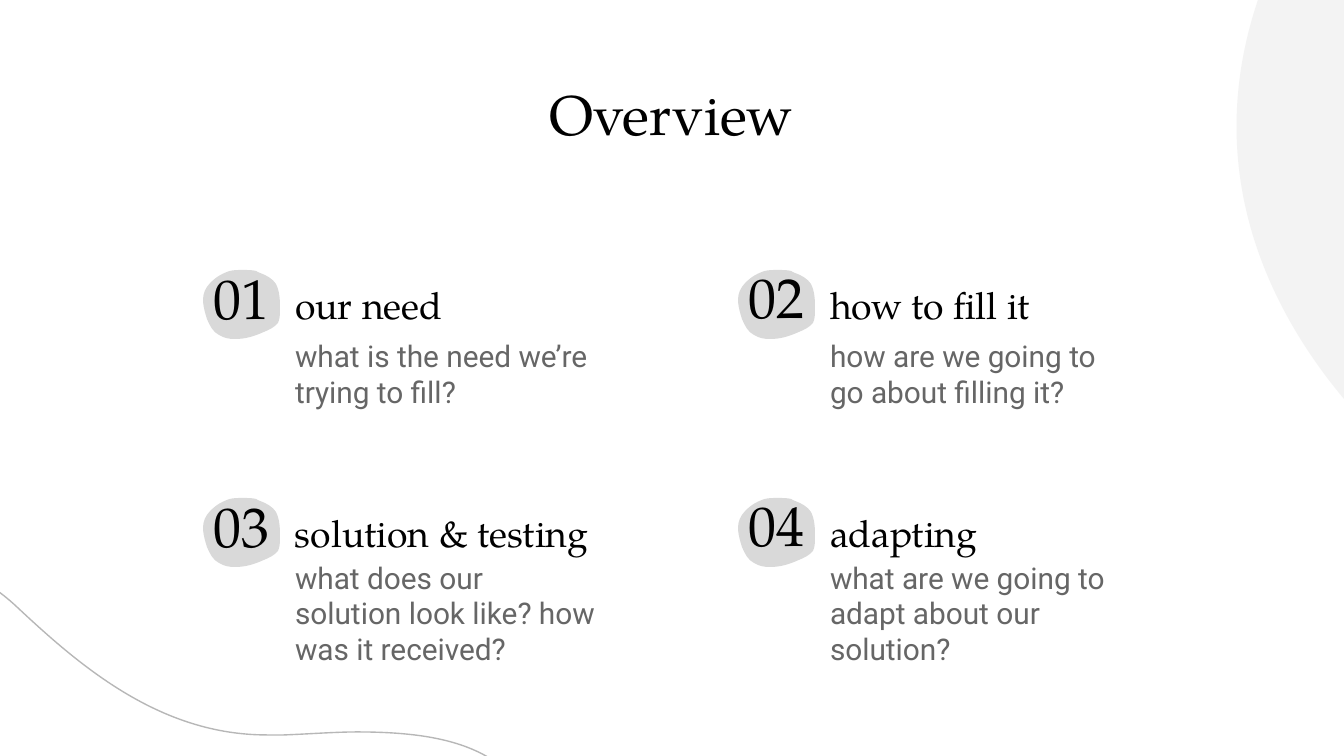
from lxml import etree
from pptx import Presentation
from pptx import util as u
from pptx.dml.color import RGBColor
from pptx.enum import text
from pptx.oxml import ns

PX = 914400 / 134.4
SLIDE = (1344, 756)

THEME = {
    "serif": "TeX Gyre Pagella", "sans": "Roboto",
    "ink": "000000", "muted": "666666",
    "blob": "D9D9D9", "disc": "F3F3F3", "wave": "B7B7B7",
    "display": 30, "heading": 20, "body": 16, "hairline": 0.75,
}

TITLE = "Overview"
TOPICS = [
    {"number": "01", "heading": "our need", "width": 281,
     "body": "what is the need we’re trying to fill?"},
    {"number": "02", "heading": "how to fill it", "width": 281,
     "body": "how are we going to go about filling it?"},
    {"number": "03", "heading": "solution & testing", "width": 352,
     "body": "what does our solution look like? how was it received?"},
    {"number": "04", "heading": "adapting", "width": 281,
     "body": "what are we going to adapt about our solution?"},
]

COLUMNS, LEFT, TOP = 2, 200, 270
PITCH_X, PITCH_Y = 535, 228
NUMBER_NUDGE = (1, 0)
BODY_DROP = (62, 73)

DISC = [[(1446, 0)], [(1446, 493)], [(1435, 488), (1159, 294), (1258, 0)]]
WAVE = [
    [(542, 817)],
    [(509, 753), (458, 732), (357, 732)],
    [(336, 732), (310, 734), (284, 735)],
    [(278, 735), (273, 735), (267, 735)],
    [(161, 735), (82, 668), (17, 607)],
    [(-17, 575), (-56, 560), (-95, 560)],
    [(-141, 560), (-186, 583), (-214, 628)],
    [(-214, 817)],
]
BLOB = [
    [(43, 0)],
    [(38, 0), (34, 0), (30, 1)],
    [(20, 4), (12, 10), (7, 17)],
    [(0, 27), (4, 39), (7, 49)],
    [(10, 56), (13, 62), (19, 65)],
    [(24, 68), (29, 69), (34, 69)],
    [(35, 69), (35, 69), (36, 69)],
    [(46, 69), (55, 66), (64, 62)],
    [(69, 60), (75, 57), (78, 53)],
    [(80, 49), (80, 44), (80, 39)],
    [(80, 31), (80, 22), (76, 14)],
    [(73, 9), (66, 5), (60, 3)],
    [(59, 3), (58, 2), (56, 1)],
    [(52, 0), (47, 0), (43, 0)],
]

STYLES = {
    "title": {"font": "serif", "size": "display", "color": "ink", "inset": 0,
              "align": text.PP_ALIGN.CENTER, "anchor": text.MSO_ANCHOR.TOP},
    "number": {"font": "serif", "size": "display", "color": "ink", "inset": 13,
               "align": text.PP_ALIGN.CENTER, "anchor": text.MSO_ANCHOR.BOTTOM},
    "heading": {"font": "serif", "size": "heading", "color": "ink", "inset": 14,
                "align": text.PP_ALIGN.LEFT, "anchor": text.MSO_ANCHOR.MIDDLE},
    "body": {"font": "sans", "size": "body", "color": "muted", "inset": 14,
             "align": text.PP_ALIGN.LEFT, "anchor": text.MSO_ANCHOR.MIDDLE},
}


def px(n):
    return u.Emu(round(n * PX))


def rgb(name):
    return RGBColor.from_string(THEME[name])


def bend(sp, segments):
    outline = next(sp._element.iter(ns.qn("a:path")))
    lines = iter(outline.findall(ns.qn("a:lnTo")))
    for segment in segments:
        group = [next(lines) for _ in segment]
        if len(group) == 3:
            curve = etree.Element(ns.qn("a:cubicBezTo"))
            group[0].addprevious(curve)
            for line in group:
                curve.append(line[0])
                outline.remove(line)


def add_outline(s, segments, dx=0, dy=0, fill=None, line=None):
    points = [(px(x + dx), px(y + dy)) for segment in segments for x, y in segment]
    builder = s.shapes.build_freeform(*points[0])
    builder.add_line_segments(points[1:], close=True)
    sp = builder.convert_to_shape()
    bend(sp, segments[1:])
    sp.shadow.inherit = False
    if fill:
        sp.fill.solid()
        sp.fill.fore_color.rgb = rgb(fill)
    else:
        sp.fill.background()
    if line:
        sp.line.color.rgb = rgb(line)
        sp.line.width = u.Pt(THEME["hairline"])
    else:
        sp.line.fill.background()


def write(sp, content, style):
    f = STYLES[style]
    tf = sp.text_frame
    frame = {"word_wrap": True, "auto_size": text.MSO_AUTO_SIZE.NONE,
             "vertical_anchor": f["anchor"]}
    for side in ("left", "top", "right", "bottom"):
        frame["margin_" + side] = px(f["inset"])
    for name, value in frame.items():
        setattr(tf, name, value)
    p = tf.paragraphs[0]
    p.alignment = f["align"]
    r = p.add_run()
    r.text = content
    r.font.name = THEME[f["font"]]
    r.font.size = u.Pt(THEME[f["size"]])
    r.font.color.rgb = rgb(f["color"])


def add_text(s, content, style, *box):
    write(s.shapes.add_textbox(*map(px, box)), content, style)


def add_topic(s, index, topic):
    row, col = divmod(index, COLUMNS)
    x, y = LEFT + col * PITCH_X, TOP + row * PITCH_Y
    add_outline(s, BLOB, x, y, fill="blob")
    add_text(s, topic["number"], "number", x - 3, y + 7 + NUMBER_NUDGE[col], 89, 66)
    add_text(s, topic["heading"], "heading", x + 81, y + 8, topic["width"], 54)
    add_text(s, topic["body"], "body", x + 81, y + BODY_DROP[row], 328, 84)


def main():
    prs = Presentation()
    prs.slide_width, prs.slide_height = map(px, SLIDE)
    s = prs.slides.add_slide(prs.slide_layouts[5])
    add_outline(s, DISC, fill="disc")
    add_outline(s, WAVE, line="wave")
    title = s.shapes.title
    title.left, title.top, title.width, title.height = map(px, (105, 80, 1133, 85))
    write(title, TITLE, "title")
    for index, topic in enumerate(TOPICS):
        add_topic(s, index, topic)
    prs.save("out.pptx")


if __name__ == "__main__":
    main()
